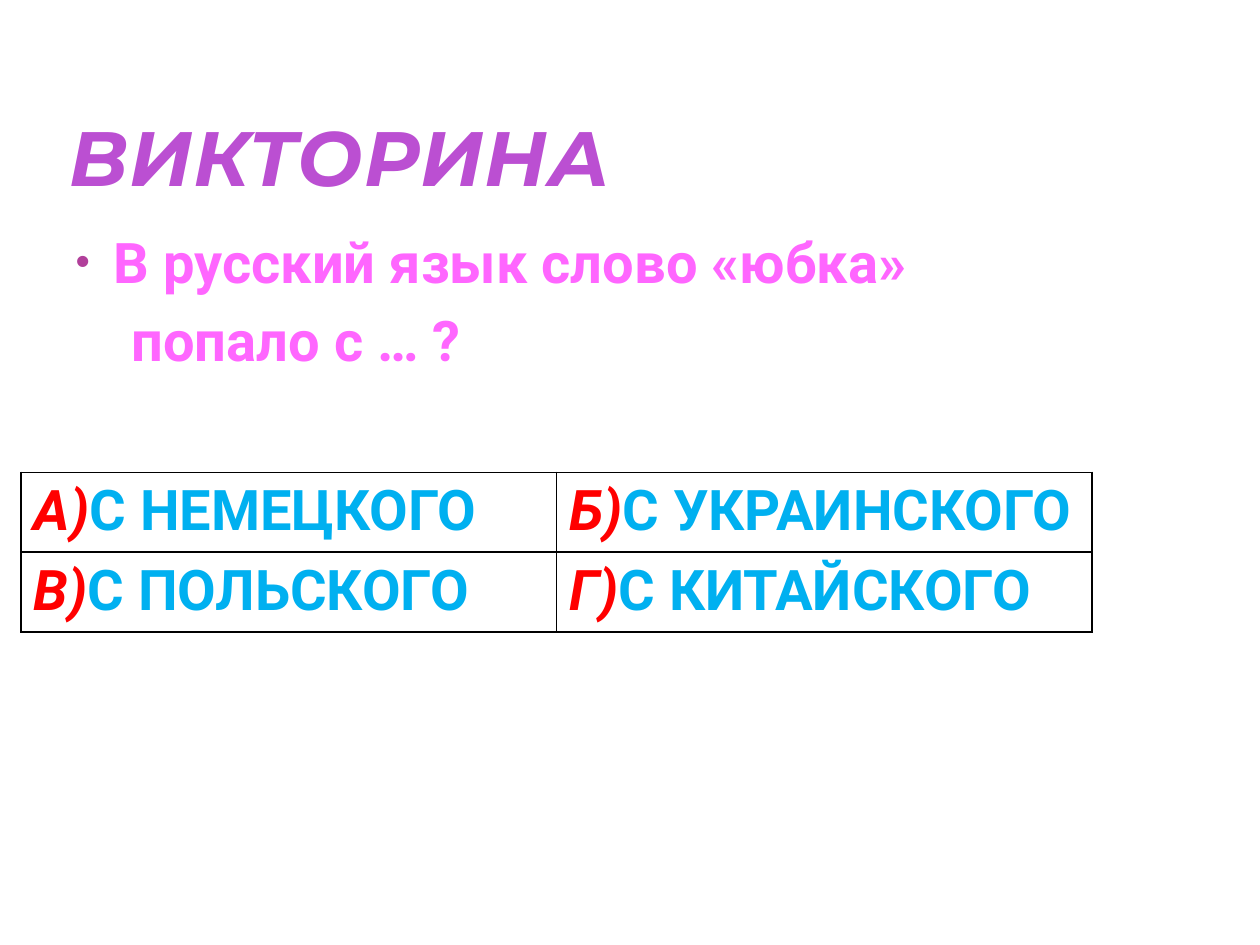
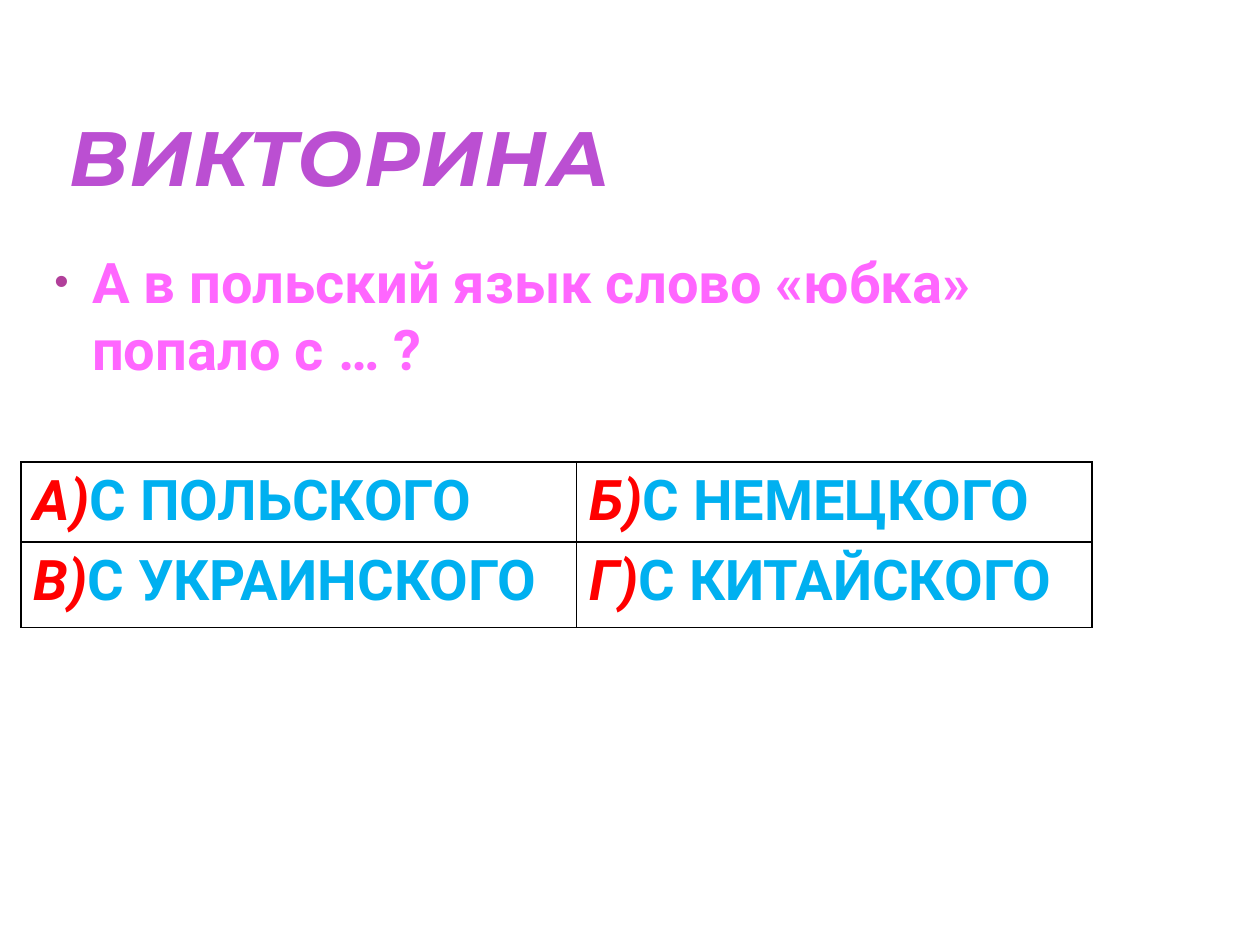
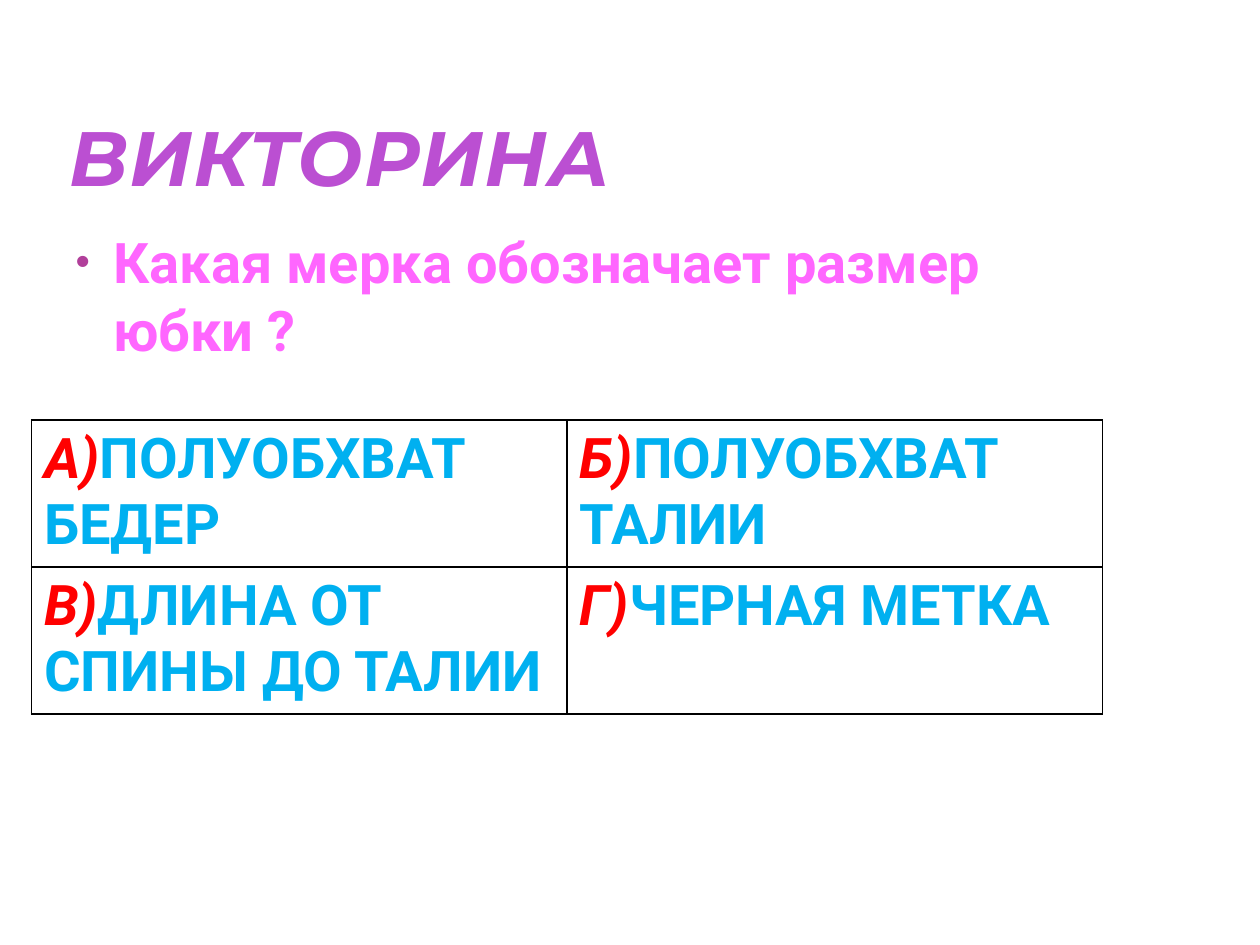
from lxml import etree
from pptx import Presentation
from pptx.dml.color import RGBColor
from pptx.enum import text as t
from pptx.oxml import ns
from pptx.util import Pt

# Content: question lines, answers, and places in points
TITLE = "ВИКТОРИНА"
QUIZ = [
    dict(ask=["В русский язык слово «юбка»", "попало с … ?"],
         box=(36.1, 126.7, 570, 381.6),
         grid=(12, 269.9), cols=(306, 306), rows=(29.5, 29.5),
         keys=[["С НЕМЕЦКОГО", "С УКРАИНСКОГО"],
               ["С ПОЛЬСКОГО", "С КИТАЙСКОГО"]]),
    dict(ask=["А в польский язык слово «юбка» попало с … ?"],
         box=(24, 138, 648, 370.8),
         grid=(12, 264), cols=(317.5, 294.5), rows=(41, 49),
         keys=[["С ПОЛЬСКОГО", "С НЕМЕЦКОГО"],
               ["С УКРАИНСКОГО", "С КИТАЙСКОГО"]]),
    dict(ask=["Какая мерка обозначает размер юбки ?"],
         box=(36.1, 126.7, 570, 381.6),
         grid=(18, 240), cols=(306, 306), rows=(29.5, 29.5),
         keys=[["ПОЛУОБХВАТ БЕДЕР", "ПОЛУОБХВАТ ТАЛИИ"],
               ["ДЛИНА ОТ СПИНЫ ДО ТАЛИИ", "ЧЕРНАЯ МЕТКА"]]),
]
MARKS = [["А)", "Б)"], ["В)", "Г)"]]

# Shared look
HUE = dict(title="BB4FD2", ask="FF66FF", dot="B13F9A",
           mark="FF0000", key="00B0F0", line="000000")
HEAD, BODY = "Montserrat", "Roboto"
HANG = 21.6  # bullet indent
STEP = 10.4  # extra indent of a second question line


def style(run, hue, size=32, face=BODY, slant=False):
    font = run.font
    font.name, font.size = face, Pt(size)
    font.bold, font.italic = True, slant
    font.color.rgb = RGBColor.from_string(HUE[hue])


def node(base, tag, **attrs):
    return etree.SubElement(base, ns.qn("a:" + tag), attrs)


def add_title(slide):
    head = slide.shapes.title
    head.left, head.top, head.width, head.height = map(Pt, (36, 25.2, 570, 90))
    frame = head.text_frame
    frame.text = TITLE
    frame.auto_size = t.MSO_AUTO_SIZE.NONE
    frame.vertical_anchor = t.MSO_ANCHOR.BOTTOM
    frame.margin_left = frame.margin_right = Pt(3.6)
    frame.margin_top = frame.margin_bottom = 0
    para = frame.paragraphs[0]
    para.alignment = t.PP_ALIGN.LEFT
    run = para.runs[0]
    style(run, "title", 44, HEAD, True)
    run.font._element.set("spc", "50")


def add_ask(slide, lines, box):
    frame = slide.shapes.add_textbox(*map(Pt, box)).text_frame
    frame.word_wrap = True
    frame.text = "\n".join(lines)
    for i, para in enumerate(frame.paragraphs):
        props = para._p.get_or_add_pPr()
        if i:
            props.set("marL", str(Pt(HANG + STEP)))
            para.space_before = Pt(6)
        else:
            props.set("marL", str(Pt(HANG)))
            props.set("indent", str(-Pt(HANG)))
            node(node(props, "buClr"), "srgbClr", val=HUE["dot"])
            node(props, "buSzPct", val="73000")
            node(props, "buFont", typeface="Arial")
            node(props, "buChar", char="•")
        style(para.runs[0], "ask")


def edge(cell):
    props = cell._tc.get_or_add_tcPr()
    for side in ("lnL", "lnR", "lnT", "lnB"):
        line = node(props, side, w=str(Pt(1)))
        node(node(line, "solidFill"), "srgbClr", val=HUE["line"])
    cell.fill.background()


def add_grid(slide, place, cols, rows, keys):
    # Rows grow to fit their text
    size = (sum(cols), sum(rows))
    grid = slide.shapes.add_table(len(rows), len(cols),
                                  *map(Pt, place + size)).table
    grid.first_row = grid.horz_banding = False
    for col, wide in zip(grid.columns, cols):
        col.width = Pt(wide)
    for r, high in enumerate(rows):
        grid.rows[r].height = Pt(high)
        for c in range(len(cols)):
            cell = grid.cell(r, c)
            para = cell.text_frame.paragraphs[0]
            for words, hue in ((MARKS[r][c], "mark"), (keys[r][c], "key")):
                run = para.add_run()
                run.text = words
                style(run, hue, slant=hue == "mark")
            edge(cell)


def main():
    deck = Presentation()
    deck.slide_width, deck.slide_height = Pt(720), Pt(540)
    for item in QUIZ:
        slide = deck.slides.add_slide(deck.slide_layouts[5])
        add_title(slide)
        add_ask(slide, item["ask"], item["box"])
        add_grid(slide, item["grid"], item["cols"], item["rows"], item["keys"])
    deck.save("out.pptx")


if __name__ == "__main__":
    main()
